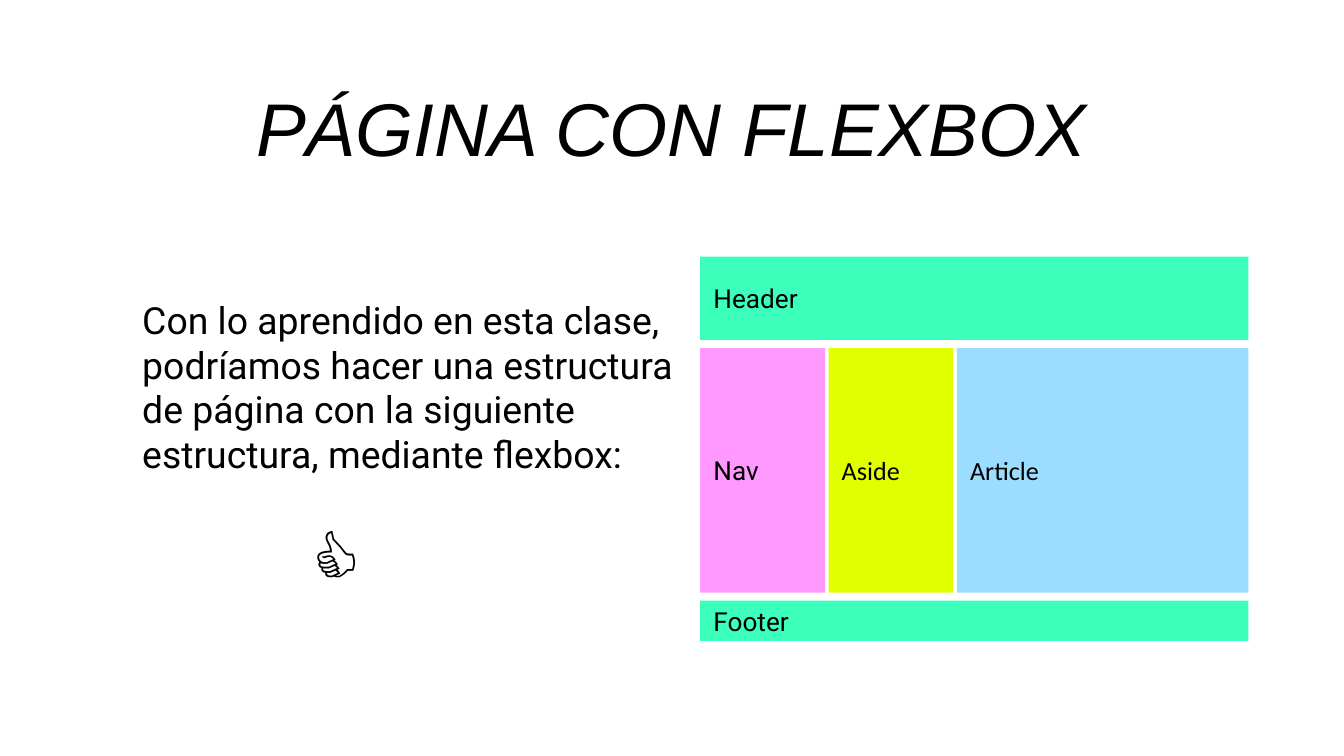
from dataclasses import dataclass

from lxml import etree
from pptx import Presentation
from pptx import util as u
from pptx.dml.color import RGBColor
from pptx.enum import shapes, text
from pptx.oxml.ns import qn


@dataclass(frozen=True)
class Theme:
    ink: str = "000000"
    paper: str = "FFFFFF"
    mint: str = "3DFFBC"
    magenta: str = "FF00FF"
    lime: str = "E0FF00"
    sky: str = "9CDCFE"
    title_size: int = 40
    body_size: int = 20
    label_size: int = 14
    title_font: str = "Arial"
    body_font: str = "Roboto"
    alternate_font: str = "Calibri"


THEME = Theme()


def write_text(shape, words, *, size, font=THEME.body_font, italic=False,
               align=text.PP_ALIGN.LEFT, anchor=text.MSO_ANCHOR.TOP,
               line_spacing=None, space_after=None):
    frame = shape.text_frame
    frame.word_wrap = True
    frame.vertical_anchor = anchor
    frame.margin_left = frame.margin_right = u.Inches(0.1)
    frame.margin_top = frame.margin_bottom = u.Inches(0.1)
    paragraph = frame.paragraphs[0]
    paragraph.alignment = align
    paragraph.line_spacing = line_spacing
    paragraph.space_after = space_after
    run = paragraph.add_run()
    run.text = words
    run.font.size = u.Pt(size)
    run.font.name = font
    run.font.italic = italic
    run.font.color.rgb = RGBColor.from_string(THEME.ink)


def add_text(slide, box, words, **style):
    shape = slide.shapes.add_textbox(*map(u.Inches, box))
    write_text(shape, words, **style)


def add_block(slide, box, label, color, font=THEME.body_font, opacity=None):
    shape = slide.shapes.add_shape(shapes.MSO_SHAPE.RECTANGLE, *map(u.Inches, box))
    shape.shadow.inherit = False
    shape.fill.solid()
    shape.fill.fore_color.rgb = RGBColor.from_string(color)
    shape.line.fill.background()
    if opacity is not None:
        fill_color = shape.fill._xPr.find(f"{qn('a:solidFill')}/{qn('a:srgbClr')}")
        etree.SubElement(fill_color, qn("a:alpha"), val=str(opacity * 1000))
    write_text(shape, label, size=THEME.label_size, font=font,
               anchor=text.MSO_ANCHOR.MIDDLE)


def add_title(slide, box):
    add_text(slide, box, "PÁGINA CON FLEXBOX", size=THEME.title_size,
             font=THEME.title_font, italic=True, align=text.PP_ALIGN.CENTER,
             line_spacing=1.15, space_after=u.Pt(3))


def add_explanation(slide, box):
    left, top, width, height = box
    add_text(slide, (left, top, width, 1.26),
             "Con lo aprendido en esta clase, podríamos hacer una estructura "
             "de página con la siguiente estructura, mediante flexbox:",
             size=THEME.body_size)
    add_text(slide, (left + 1.26, top + height - 0.88, 1.3, 0.88), "👍",
             size=THEME.title_size, font=THEME.title_font)


def add_page_layout(slide, box):
    left, top, width, height = box
    header_height, footer_height, row_gap = 0.62, 0.3, 0.06
    side_width, article_width = 0.93, 2.17
    middle_top = top + header_height + row_gap
    middle_height = height - header_height - footer_height - 2 * row_gap
    column_step = (width - article_width) / 2

    add_block(slide, (left, top, width, header_height), "Header", THEME.mint)
    columns = [
        ("Nav", side_width, THEME.magenta, THEME.body_font, 40),
        ("Aside", side_width, THEME.lime, THEME.alternate_font, None),
        ("Article", article_width, THEME.sky, THEME.alternate_font, None),
    ]
    for index, (label, column_width, color, font, opacity) in enumerate(columns):
        column_left = left + index * column_step
        add_block(slide, (column_left, middle_top, column_width, middle_height),
                  label, color, font, opacity)
    add_block(slide, (left, top + height - footer_height, width, footer_height),
              "Footer", THEME.mint)


def main():
    presentation = Presentation()
    presentation.slide_width = u.Inches(10)
    presentation.slide_height = u.Inches(10 * 9 / 16)
    slide = presentation.slides.add_slide(presentation.slide_layouts[6])
    slide.background.fill.solid()
    slide.background.fill.fore_color.rgb = RGBColor.from_string(THEME.paper)
    add_title(slide, (1.1, 0.41, 7.79, 0.76))
    add_explanation(slide, (0.96, 2.11, 4.25, 2.48))
    add_page_layout(slide, (5.21, 1.91, 4.08, 2.86))
    presentation.save("out.pptx")


if __name__ == "__main__":
    main()
